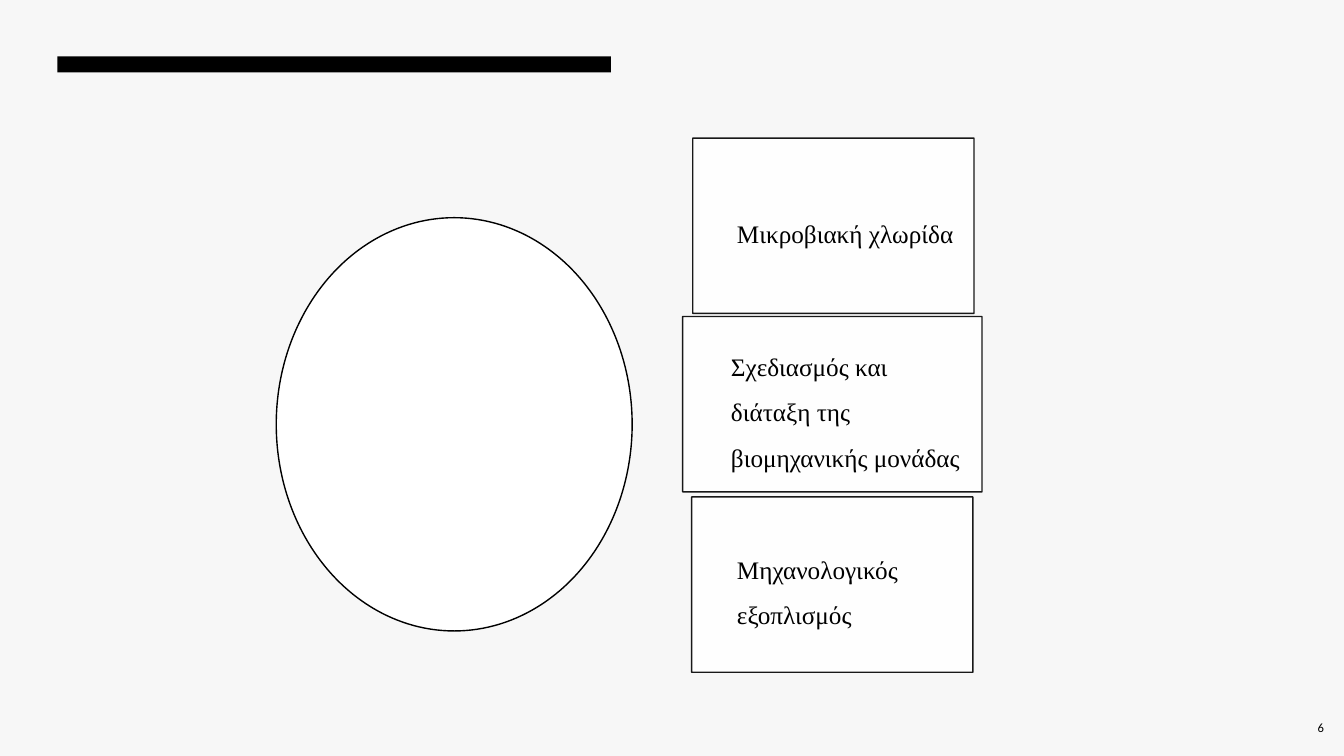
from dataclasses import dataclass

from lxml import etree
from pptx import Presentation, util as u
from pptx.dml.color import RGBColor
from pptx.enum import shapes, text
from pptx.oxml import ns


@dataclass(frozen=True)
class Theme:
    background: str = "F7F7F7"
    ink: str = "000000"
    card: str = "FFFFFF"
    card_opacity: int = 90
    outline: float = 1
    card_font: str = "Times New Roman"
    card_size: int = 18
    number_font: str = "Calibri"
    number_size: int = 9


THEME = Theme()
CARD_HEIGHT = 1.74
LEFT, JUSTIFY = text.PP_ALIGN.LEFT, text.PP_ALIGN.JUSTIFY

# Card left, top, width; label left, width, alignment; wording
CARDS = [
    (6.87, 1.37, 2.79, 7.31, 2.34, JUSTIFY, "Μικροβιακή χλωρίδα"),
    (6.77, 3.14, 2.97, 7.25, 2.5, LEFT,
     "Σχεδιασμός και διάταξη της βιομηχανικής μονάδας"),
    (6.86, 4.93, 2.79, 7.31, 2.34, JUSTIFY, "Μηχανολογικός εξοπλισμός"),
]


def apply_format(target, values):
    for name, value in values.items():
        setattr(target, name, value)


def set_opacity(shape, percent):
    """Make the fill and the outline of a shape partly transparent."""
    for color in shape._element.spPr.iter(ns.qn("a:srgbClr")):
        alpha = etree.SubElement(color, ns.qn("a:alpha"))
        alpha.set("val", str(percent * 1000))


def add_block(slide, kind, box, fill, outlined=True, opacity=100):
    shape = slide.shapes.add_shape(kind, *map(u.Inches, box))
    shape.shadow.inherit = False
    shape.fill.solid()
    shape.fill.fore_color.rgb = RGBColor.from_string(fill)
    if outlined:
        shape.line.color.rgb = RGBColor.from_string(THEME.ink)
        shape.line.width = u.Pt(THEME.outline)
    else:
        shape.line.fill.background()
    if opacity < 100:
        set_opacity(shape, opacity)


def add_label(slide, box, wording, font, frame_format, paragraph_format):
    frame = slide.shapes.add_textbox(*map(u.Inches, box)).text_frame
    apply_format(frame, {"word_wrap": True,
                         "vertical_anchor": text.MSO_ANCHOR.MIDDLE,
                         **frame_format})
    paragraph = frame.paragraphs[0]
    apply_format(paragraph, paragraph_format)
    run = paragraph.add_run()
    run.text = wording
    name, size = font
    apply_format(run.font, {"name": name, "size": u.Pt(size)})
    run.font.color.rgb = RGBColor.from_string(THEME.ink)


def add_card(slide, left, top, width, label_left, label_width, alignment, wording):
    add_block(slide, shapes.MSO_SHAPE.RECTANGLE, (left, top, width, CARD_HEIGHT),
              THEME.card, opacity=THEME.card_opacity)
    inset = u.Inches(0.14)
    add_label(slide, (label_left, top, label_width, CARD_HEIGHT), wording,
              (THEME.card_font, THEME.card_size),
              {"margin_left": 0, "margin_top": inset,
               "margin_right": inset, "margin_bottom": inset},
              {"alignment": alignment, "line_spacing": 1.5,
               "space_after": u.Pt(0.35 * THEME.card_size)})


def main():
    presentation = Presentation()
    apply_format(presentation, {"slide_width": u.Inches(13.33),
                                "slide_height": u.Inches(7.5)})
    slide = presentation.slides.add_slide(presentation.slide_layouts[6])
    slide.background.fill.solid()
    slide.background.fill.fore_color.rgb = RGBColor.from_string(THEME.background)

    # Header bar and slide number
    add_block(slide, shapes.MSO_SHAPE.RECTANGLE, (0.57, 0.56, 5.49, 0.16),
              THEME.ink, outlined=False)
    add_label(slide, (12.53, 7.02, 0.7, 0.4), "6",
              (THEME.number_font, THEME.number_size), {},
              {"alignment": text.PP_ALIGN.RIGHT})

    # Stack of cards
    for card in CARDS:
        add_card(slide, *card)

    # Empty oval beside the cards
    add_block(slide, shapes.MSO_SHAPE.OVAL, (2.74, 2.16, 3.53, 4.1), THEME.card)

    presentation.save("out.pptx")


if __name__ == "__main__":
    main()
